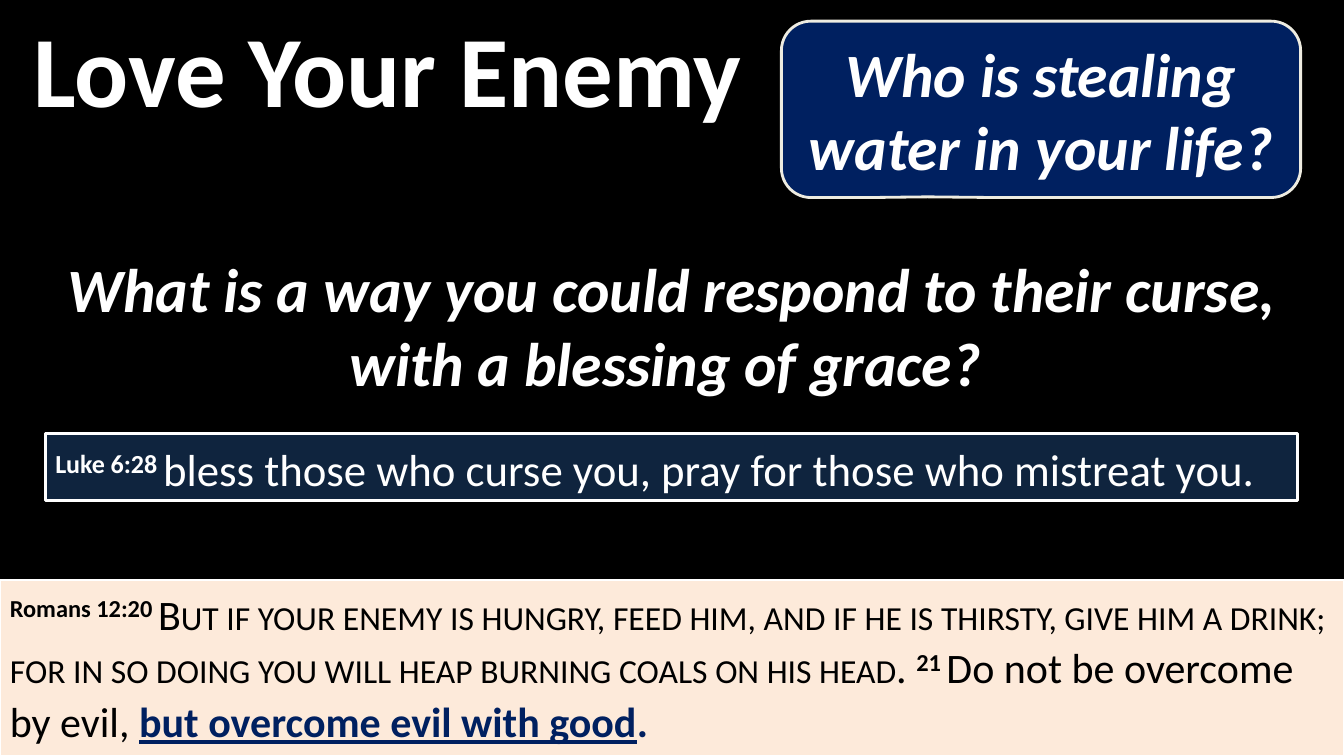
from pptx import Presentation
from pptx.dml.color import RGBColor
from pptx.enum.shapes import MSO_SHAPE
from pptx.enum.text import MSO_ANCHOR, MSO_AUTO_SIZE, PP_ALIGN
from pptx.util import Inches, Pt

FONT = "Calibri"
COLORS = {
    "black": "000000",
    "white": "FFFFFF",
    "navy": "002060",
    "midnight": "0F243E",
    "peach": "FDEADA",
    "cream": "EEECE1",
}
CALLOUT_TAIL = (-0.219, 0.496, 0.167)


def color(name):
    return RGBColor.from_string(COLORS[name])


def add_span(para, text, size, ink, bold=False, italic=False,
             underline=None, raised=False, small_caps=False):
    span = para.add_run()
    span.text = text
    font = span.font
    font.name, font.size = FONT, Pt(size)
    font.bold, font.italic, font.underline = bold, italic, underline
    font.color.rgb = color(ink)
    properties = font._element
    if raised:
        properties.set("baseline", "30000")
    if small_caps:
        properties.set("cap", "small")


def add_panel(page, kind, box, fill=None, line=None, line_width=2):
    panel = page.shapes.add_shape(kind, *map(Inches, box))
    panel.shadow.inherit = False
    if fill:
        panel.fill.solid()
        panel.fill.fore_color.rgb = color(fill)
    else:
        panel.fill.background()
    if line:
        panel.line.color.rgb = color(line)
        panel.line.width = Pt(line_width)
    else:
        panel.line.fill.background()
    panel.text_frame.word_wrap = True
    return panel


def add_title(page, box, text):
    title = page.shapes.title
    title.left, title.top, title.width, title.height = map(Inches, box)
    title.fill.solid()
    title.fill.fore_color.rgb = color("black")
    frame = title.text_frame
    frame.auto_size = MSO_AUTO_SIZE.NONE
    frame.word_wrap = True
    frame.vertical_anchor = MSO_ANCHOR.MIDDLE
    frame.margin_left = Inches(0.33)
    para = frame.paragraphs[0]
    para.alignment = PP_ALIGN.LEFT
    add_span(para, text, 72, "white", bold=True)


def add_question(page, box, text, fill=None, line=None):
    callout = add_panel(page, MSO_SHAPE.ROUNDED_RECTANGULAR_CALLOUT, box, fill, line)
    for index, value in enumerate(CALLOUT_TAIL):
        callout.adjustments[index] = value
    frame = callout.text_frame
    frame.vertical_anchor = MSO_ANCHOR.MIDDLE
    para = frame.paragraphs[0]
    para.alignment = PP_ALIGN.CENTER
    add_span(para, text, 44, "white", bold=True, italic=True)


def add_verse(page, box, size, ink, spans, fill, line_width):
    """Place a scripture panel; spans are (text, formatting) pairs."""
    panel = add_panel(page, MSO_SHAPE.RECTANGLE, box, fill, "white", line_width)
    frame = panel.text_frame
    frame.vertical_anchor = MSO_ANCHOR.TOP
    para = frame.paragraphs[0]
    para.alignment = PP_ALIGN.LEFT
    para.line_spacing = 1.07
    for text, formatting in spans:
        add_span(para, text, size, **{"ink": ink, **formatting})


def main():
    deck = Presentation()
    deck.slide_width, deck.slide_height = Inches(13.33), Inches(7.5)
    page = deck.slides.add_slide(deck.slide_layouts[5])
    page.background.fill.solid()
    page.background.fill.fore_color.rgb = color("black")

    verse_number = {"bold": True, "raised": True}
    emphasis = {"ink": "navy", "bold": True}

    # Title band
    add_title(page, (0, 0, 13.33, 1.33), "Love Your Enemy")

    # Romans passage along the bottom
    add_verse(page, (0, 5.75, 13.33, 1.75), 30, "black", [
        ("Romans 12:20 ", verse_number),
        ("But if your enemy is hungry, feed him, and if he is thirsty, "
         "give him a drink; for in so doing you will heap burning coals "
         "on his head", {"small_caps": True}),
        (". ", {}),
        ("21 ", verse_number),
        ("Do not be overcome by evil, ", {}),
        ("but overcome evil with good", {**emphasis, "underline": True}),
        (".", emphasis),
    ], "peach", 1.5)

    # Questions
    add_question(page, (0.21, 2.27, 12.92, 1.91),
                 "What is a way you could respond to their curse, "
                 "with a blessing of grace? ")
    add_question(page, (7.75, 0.21, 5.15, 1.75),
                 "Who is stealing water in your life?", "navy", "cream")

    # Luke verse
    add_verse(page, (0.45, 4.3, 12.42, 0.67), 32, "white", [
        ("Luke 6:28 ", verse_number),
        ("bless those who curse you, pray for those who mistreat you.", {}),
    ], "midnight", 2)

    deck.save("out.pptx")


if __name__ == "__main__":
    main()
